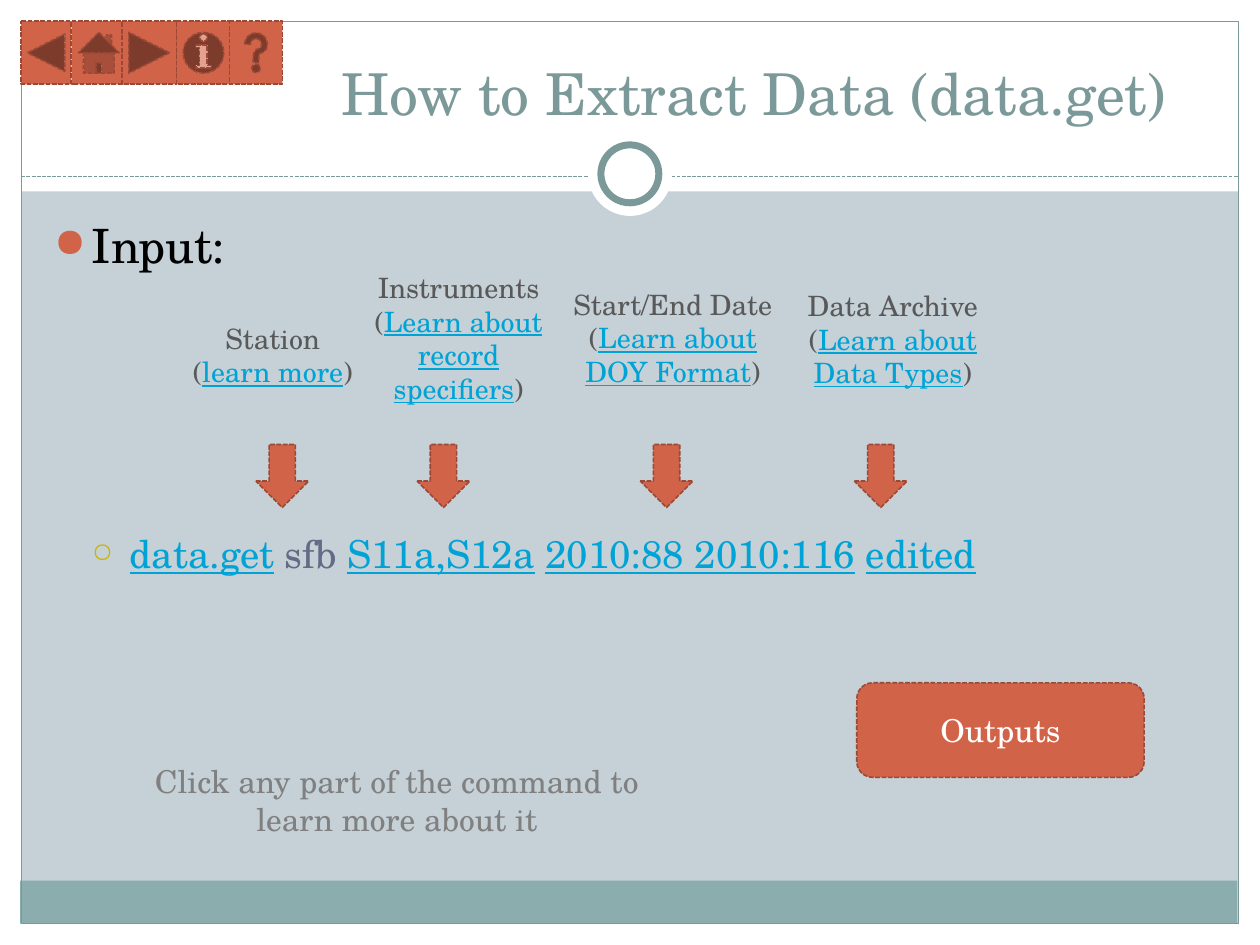
from lxml.etree import SubElement
from pptx import Presentation
from pptx.dml.color import RGBColor
from pptx.enum.dml import MSO_LINE
from pptx.enum.shapes import MSO_CONNECTOR, MSO_SHAPE as Shape
from pptx.enum.text import MSO_ANCHOR as Anchor, PP_ALIGN as Align
from pptx.oxml.ns import qn
from pptx.util import Pt

FONT = "TeX Gyre Schola"
COLORS = {
    "background": "C5D1D7", "white": "FFFFFF", "footer": "8CADAE",
    "frame": "7C999A", "accent": "D16349", "accent_edge": "9B4936",
    "black": "000000", "caption": "595959", "link": "00A3D6",
    "command": "646B86", "ring_bullet": "CCB400", "hint": "808080",
}

# Each paragraph is a list of (text, colour) runs; link runs are underlined.
TITLE = [[("How to Extract Data (data.get)", "frame")]]
HINT = [[("Click any part of the command to learn more about it", "hint")]]
OUTPUTS = [[("Outputs", "white")]]
BODY = [
    [("Input:", "black")],
    [("data.get", "link"), (" sfb ", "command"), ("S11a,S12a", "link"),
     (" ", "command"), ("2010:88 2010:116", "link"), (" ", "command"),
     ("edited", "link")],
]
# (box, arrow left, paragraphs)
ARGUMENTS = [
    ((85, 180, 141.8, 65.5), 146.2,
     [[("Station", "caption")],
      [("(", "caption"), ("learn more", "link"), (")", "caption")]]),
    ((193.7, 151.2, 136.8, 104.4), 238.3,
     [[("Instruments (", "caption"), ("Learn about record specifiers", "link"),
       (")", "caption")]]),
    ((313.2, 160.6, 142.6, 85), 365.8,
     [[("Start/End Date", "caption")],
      [("(", "caption"), ("Learn about DOY Format", "link"), (")", "caption")]]),
    ((448.6, 161.3, 123.1, 85), 488.2,
     [[("Data Archive", "caption")],
      [("(", "caption"), ("Learn about Data Types", "link"), (")", "caption")]]),
]
# (shape, left, width)
NAVIGATION = [
    (Shape.ACTION_BUTTON_BACK_OR_PREVIOUS, 12.2, 28.4),
    (Shape.ACTION_BUTTON_HOME, 41, 31),
    (Shape.ACTION_BUTTON_FORWARD_OR_NEXT, 69.8, 31),
    (Shape.ACTION_BUTTON_INFORMATION, 100.8, 31),
    (Shape.ACTION_BUTTON_HELP, 131.2, 30.2),
]
ARROW_TOP, ARROW_SIZE = 254, (30.2, 36)
BORDER, WIDTH, HEIGHT = 12.2, 720, 540
WHITE_BANDS = [
    (0, HEIGHT - BORDER, WIDTH, BORDER), (0, 0, WIDTH, 109.4),
    (0, 0, BORDER, HEIGHT), (WIDTH - BORDER, 0, BORDER, HEIGHT),
]


def rgb(name):
    return RGBColor.from_string(COLORS[name])


def add_shape(kind, box, fill=None, edge=None, weight=0.75, dashed=False):
    shape = slide.shapes.add_shape(kind, *map(Pt, box))
    shape.shadow.inherit = False
    if fill:
        shape.fill.solid()
        shape.fill.fore_color.rgb = rgb(fill)
    else:
        shape.fill.background()
    if edge:
        shape.line.color.rgb = rgb(edge)
        shape.line.width = Pt(weight)
        if dashed:
            shape.line.dash_style = MSO_LINE.SQUARE_DOT
    else:
        shape.line.fill.background()
    return shape


def add_accent(kind, box):
    return add_shape(kind, box, "accent", "accent_edge", 0.9, dashed=True)


def write(frame, paragraphs, sizes, align=Align.CENTER, anchor=Anchor.TOP):
    """Fill a text frame; sizes holds one size, or one per paragraph."""
    frame.word_wrap = True
    frame.vertical_anchor = anchor
    for i, runs in enumerate(paragraphs):
        paragraph = frame.paragraphs[0] if i == 0 else frame.add_paragraph()
        paragraph.alignment = align
        for text, color in runs:
            run = paragraph.add_run()
            run.text = text
            run.font.name = FONT
            run.font.size = Pt(sizes[min(i, len(sizes) - 1)])
            run.font.color.rgb = rgb(color)
            if color == "link":
                run.font.underline = True


def add_text(box, *args, **options):
    frame = slide.shapes.add_textbox(*map(Pt, box)).text_frame
    write(frame, *args, **options)
    return frame


def set_bullet(paragraph, mark, color, percent, margin, hanging=21.6):
    props = paragraph._p.get_or_add_pPr()
    props.set("marL", str(Pt(margin)))
    props.set("indent", str(-Pt(hanging)))
    SubElement(SubElement(props, qn("a:buClr")), qn("a:srgbClr"), val=COLORS[color])
    SubElement(props, qn("a:buSzPct"), val=str(percent * 1000))
    SubElement(props, qn("a:buChar"), char=mark)


deck = Presentation()
deck.slide_width, deck.slide_height = Pt(WIDTH), Pt(HEIGHT)
slide = deck.slides.add_slide(deck.slide_layouts[6])
slide.background.fill.solid()
slide.background.fill.fore_color.rgb = rgb("background")

# Frame and header ring
for band in WHITE_BANDS:
    add_shape(Shape.RECTANGLE, band, "white")
add_shape(Shape.RECTANGLE, (11.5, 503.3, 695.5, 24.5), "footer")
add_shape(Shape.RECTANGLE,
          (BORDER, BORDER, WIDTH - 2 * BORDER, HEIGHT - 2 * BORDER), edge="frame")
divider = slide.shapes.add_connector(
    MSO_CONNECTOR.STRAIGHT, Pt(BORDER), Pt(100.8), Pt(WIDTH - BORDER), Pt(100.8))
divider.line.color.rgb = rgb("frame")
divider.line.width = Pt(0.75)
divider.line.dash_style = MSO_LINE.SQUARE_DOT
SubElement(divider._element.spPr, qn("a:effectLst"))
add_shape(Shape.OVAL, (336, 75.4, 48, 48), "white")
add_shape(Shape.OVAL, (343.4, 82.8, 33.1, 33.1), "white", "frame", 4)

# Title and command
add_text((95, 16.6, 671.8, 59.8), TITLE, [33], anchor=Anchor.BOTTOM)
body = add_text((23.8, 120.2, 669.6, 360), BODY, [27, 22], align=Align.LEFT)
heading, command = body.paragraphs
command.space_before = Pt(147)
set_bullet(heading, "●", "accent", 85, 21.6)
set_bullet(command, "○", "ring_bullet", 70, 43.2)

# Captions pointing at the command's arguments
for box, arrow_left, caption in ARGUMENTS:
    add_text(box, caption, [16])
    add_accent(Shape.DOWN_ARROW, (arrow_left, ARROW_TOP, *ARROW_SIZE))

# Buttons and hint
for kind, left, width in NAVIGATION:
    add_accent(kind, (left, BORDER, width, 36))
outputs = add_accent(Shape.ROUNDED_RECTANGLE, (489.6, 390.2, 164.2, 54))
write(outputs.text_frame, OUTPUTS, [18], anchor=Anchor.MIDDLE)
add_text((72, 432, 309.6, 51.1), HINT, [18])

deck.save("out.pptx")
